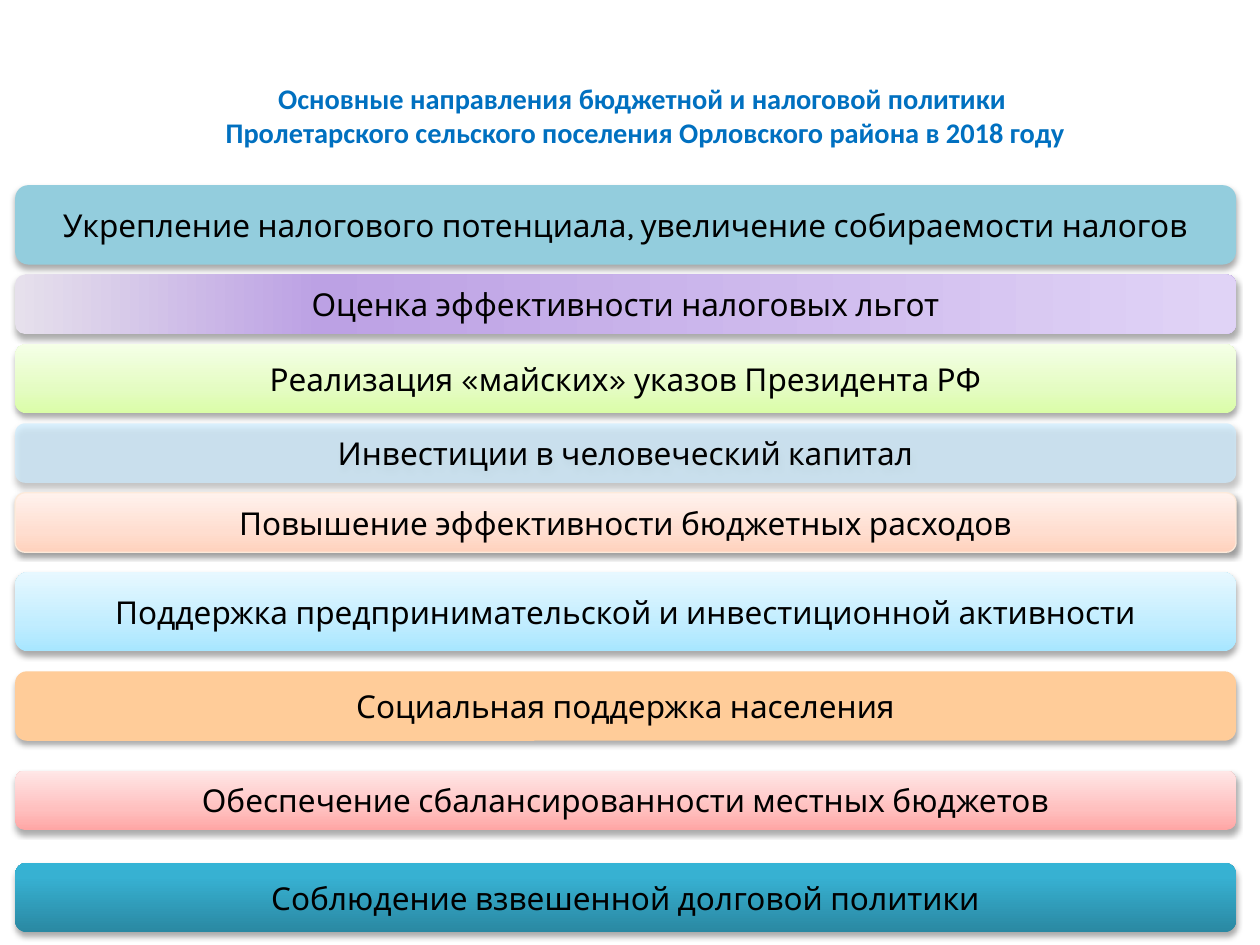
import pptx
import pptx.util
import pptx.dml.color
import pptx.enum.shapes
import pptx.enum.text
import pptx.oxml.ns
import lxml.etree

RGBColor = pptx.dml.color.RGBColor
BLACK = RGBColor(0x00, 0x00, 0x00)
TITLE_BLUE = RGBColor(0x00, 0x70, 0xC0)
TEAL = RGBColor(0x93, 0xCD, 0xDD)
PALE_BLUE = RGBColor(0xCC, 0xEC, 0xFF)
ORANGE = RGBColor(0xFF, 0xCC, 0x99)
PEACH_EDGE = RGBColor(0xFD, 0xEA, 0xDA)
PURPLES = [(0, RGBColor(0xE6, 0xE0, 0xEC)), (25, RGBColor(0xBC, 0xA1, 0xE4)),
           (100, RGBColor(0xE0, 0xD3, 0xF6))]
GREENS = [(0, RGBColor(0xDA, 0xFD, 0xA7)), (35, RGBColor(0xE4, 0xFC, 0xC2)),
          (100, RGBColor(0xF5, 0xFF, 0xE7))]
PEACHES = [(0, RGBColor(0xFF, 0xD2, 0xBD)), (35, RGBColor(0xFF, 0xDE, 0xD0)),
           (100, RGBColor(0xFF, 0xF2, 0xED))]
BLUES = [(0, RGBColor(0xA7, 0xE6, 0xFF)), (35, RGBColor(0xC1, 0xED, 0xFF)),
         (100, RGBColor(0xE7, 0xF8, 0xFF))]
REDS = [(0, RGBColor(0xFF, 0xA6, 0xA5)), (35, RGBColor(0xFF, 0xC0, 0xBF)),
        (100, RGBColor(0xFF, 0xE7, 0xE7))]
DEEP_TEALS = [(0, RGBColor(0x2A, 0x88, 0xA2)), (80, RGBColor(0x37, 0xB1, 0xD2)),
              (100, RGBColor(0x34, 0xB4, 0xD6))]

ROW = pptx.util.Cm(0.2)
BAR_LEFT = pptx.util.Inches(0.12)
BAR_WIDTH = pptx.util.Inches(9.69)
FIRST_BAR_TOP = pptx.util.Inches(1.47)

TITLE = ["Основные направления бюджетной и налоговой политики ",
         "Пролетарского сельского поселения Орловского района в 2018 году"]

# Text, height in rows, gap below in rows, fill, further bar options
BARS = [
    ("Укрепление налогового потенциала, увеличение собираемости налогов", 8, 1, TEAL, {}),
    ("Оценка эффективности налоговых льгот", 6, 1, PURPLES, {"angle": 0}),
    ("Реализация «майских» указов Президента РФ", 7, 1, GREENS, {}),
    ("Инвестиции в человеческий капитал", 6, 1, PALE_BLUE, {"opacity": 69}),
    ("Повышение эффективности бюджетных расходов", 6, 2, PEACHES,
     {"edge": PEACH_EDGE, "shadow": (38, 3.1, 1.6)}),
    ("Поддержка предпринимательской и инвестиционной активности", 8, 2, BLUES, {}),
    ("Социальная поддержка населения", 7, 3, ORANGE, {}),
    ("Обеспечение сбалансированности местных бюджетов", 6, 3.3, REDS, {}),
    ("Соблюдение взвешенной долговой политики", 7, 0, DEEP_TEALS, {}),
]


def add_element(parent, tag, **attributes):
    element = lxml.etree.SubElement(parent, pptx.oxml.ns.qn(tag))
    for name, value in attributes.items():
        element.set(name, str(value))
    return element


class PolicySlide:
    """Holds the fonts and the current slide, and draws its elements."""

    title_font, title_size = "Calibri", 16.2
    bar_font, bar_size = "Karla", 18

    def __init__(self, presentation):
        self.slide = presentation.slides.add_slide(presentation.slide_layouts[6])

    def add_lines(self, shape, lines, font, size, color, bold=False):
        frame = shape.text_frame
        frame.word_wrap = True
        frame.vertical_anchor = pptx.enum.text.MSO_ANCHOR.MIDDLE
        paragraph = frame.paragraphs[0]
        paragraph.alignment = pptx.enum.text.PP_ALIGN.CENTER
        for index, line in enumerate(lines):
            if index:
                paragraph.add_line_break()
            run = paragraph.add_run()
            run.text = line
            run.font.name = font
            run.font.size = pptx.util.Pt(size)
            run.font.bold = bold
            run.font.color.rgb = color

    def title(self, lines, left, top, width, height):
        box = self.slide.shapes.add_textbox(
            *(pptx.util.Inches(length) for length in (left, top, width, height)))
        self.add_lines(box, lines, self.title_font, self.title_size, TITLE_BLUE, bold=True)

    def paint_gradient(self, shape, stops, angle):
        """Fill with (percent, colour) stops; the angle runs counterclockwise."""
        shape.fill.gradient()
        shape.fill.gradient_angle = angle
        stop_list = shape._element.spPr.find(".//" + pptx.oxml.ns.qn("a:gsLst"))
        for stop in list(stop_list):
            stop_list.remove(stop)
        for percent, color in stops:
            stop = add_element(stop_list, "a:gs", pos=percent * 1000)
            add_element(stop, "a:srgbClr", val=color)

    def paint_solid(self, shape, color, opacity):
        shape.fill.solid()
        shape.fill.fore_color.rgb = color
        if opacity < 100:
            tone = shape._element.spPr.find(".//" + pptx.oxml.ns.qn("a:srgbClr"))
            add_element(tone, "a:alpha", val=opacity * 1000)

    def drop_shadow(self, shape, opacity, blur, distance):
        """Cast a black shadow straight down; blur and distance in points."""
        shape.shadow.inherit = False
        effects = shape._element.spPr.find(pptx.oxml.ns.qn("a:effectLst"))
        shadow = add_element(effects, "a:outerShdw", blurRad=pptx.util.Pt(blur),
                             dist=pptx.util.Pt(distance), dir=90 * 60000, rotWithShape=0)
        tone = add_element(shadow, "a:srgbClr", val=BLACK)
        add_element(tone, "a:alpha", val=opacity * 1000)

    def bar(self, text, top, height, fill, angle=90, opacity=100, edge=None,
            shadow=(32, 3.5, 2.2)):
        shape = self.slide.shapes.add_shape(
            pptx.enum.shapes.MSO_SHAPE.ROUNDED_RECTANGLE, BAR_LEFT, top, BAR_WIDTH, height)
        if isinstance(fill, list):
            self.paint_gradient(shape, fill, angle)
        else:
            self.paint_solid(shape, fill, opacity)
        if edge is None:
            shape.line.fill.background()
        else:
            shape.line.color.rgb = edge
            shape.line.width = pptx.util.Pt(0.75)
        self.drop_shadow(shape, *shadow)
        self.add_lines(shape, [text], self.bar_font, self.bar_size, BLACK)


def main():
    presentation = pptx.Presentation()
    presentation.slide_width = pptx.util.Inches(10)
    presentation.slide_height = pptx.util.Inches(7.5)
    page = PolicySlide(presentation)
    page.title(TITLE, 0.24, 0.6, 9.76, 0.63)
    top = FIRST_BAR_TOP
    for text, rows, gap, fill, options in BARS:
        page.bar(text, top, rows * ROW, fill, **options)
        top += round((rows + gap) * ROW)
    presentation.save("out.pptx")


if __name__ == "__main__":
    main()
